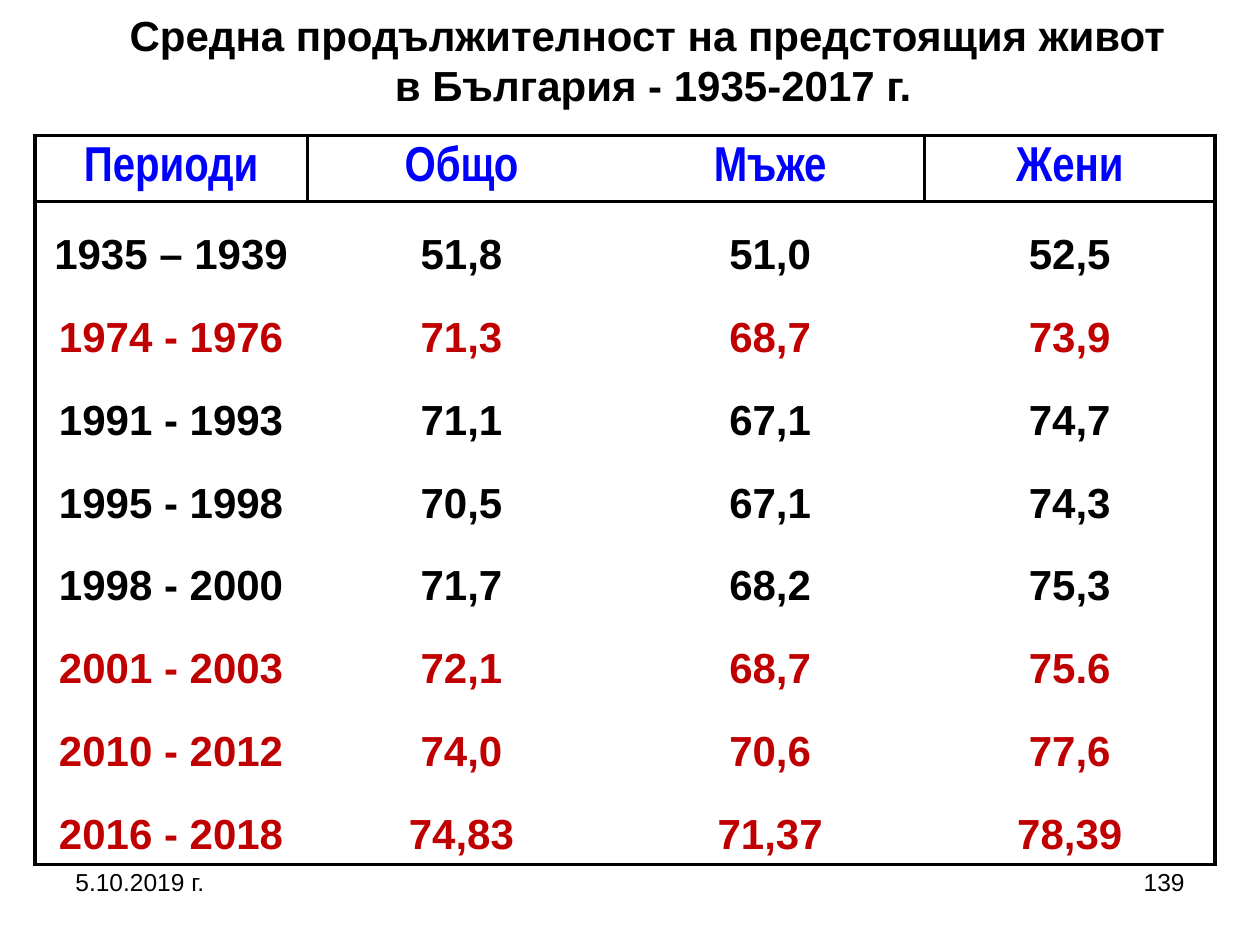
from lxml.etree import SubElement
from pptx import Presentation
from pptx.dml.color import RGBColor
from pptx.enum.text import MSO_ANCHOR as Anchor, MSO_AUTO_SIZE as Fit, PP_ALIGN as Align
from pptx.oxml.ns import qn
from pptx.util import Pt

BLACK, RED, BLUE, WHITE = "000000", "C00000", "0000FF", "FFFFFF"
HEADS = ["Периоди", "Общо", "Мъже", "Жени"]
ROWS = [
    (BLACK, "1935 – 1939", "51,8", "51,0", "52,5"),
    (RED, "1974 - 1976", "71,3", "68,7", "73,9"),
    (BLACK, "1991 - 1993", "71,1", "67,1", "74,7"),
    (BLACK, "1995 - 1998", "70,5", "67,1", "74,3"),
    (BLACK, "1998 - 2000", "71,7", "68,2", "75,3"),
    (RED, "2001 - 2003", "72,1", "68,7", "75.6"),
    (RED, "2010 - 2012", "74,0", "70,6", "77,6"),
    (RED, "2016 - 2018", "74,83", "71,37", "78,39"),
]
WIDTHS = [155.5, 176.4, 176.4, 166]


def tint(code):
    """Turn a hex string into a colour."""
    return RGBColor.from_string(code)


def add_run(para, text, size, color=BLACK, bold=False, face="Arial"):
    """Add one formatted run to a paragraph."""
    run = para.add_run()
    run.text = text
    font = run.font
    font.name, font.size, font.bold = face, Pt(size), bold
    font.color.rgb = tint(color)


def add_title(slide, lines):
    """Place the title and write its lines."""
    title = slide.shapes.title
    title.left, title.top, title.width, title.height = Pt(64), Pt(1.5), Pt(618.5), Pt(65.5)
    frame = title.text_frame
    frame.word_wrap, frame.auto_size = False, Fit.NONE
    frame.vertical_anchor = Anchor.MIDDLE
    for i, line in enumerate(lines):
        para = frame.add_paragraph() if i else frame.paragraphs[0]
        para.alignment = Align.CENTER
        add_run(para, line, 24, bold=True)


def add_note(slide, left, text, align):
    """Add a footer text box."""
    box = slide.shapes.add_textbox(Pt(left), Pt(492), Pt(168), Pt(37.5))
    box.text_frame.word_wrap = True
    para = box.text_frame.paragraphs[0]
    para.alignment = align
    add_run(para, text, 14)


def set_edges(cell, edges):
    """Draw the named cell edges and hide the rest."""
    props = cell._tc.get_or_add_tcPr()
    for side in "LRTB":
        line = SubElement(props, qn(f"a:ln{side}"), w=str(Pt(2)))
        if side in edges:
            fill = SubElement(line, qn("a:solidFill"))
            SubElement(fill, qn("a:srgbClr"), val=BLACK)
        else:
            SubElement(line, qn("a:noFill"))


def find_edges(row, col):
    """Name the edges drawn around one cell."""
    last = len(HEADS) - 1
    edges = "L" if col == 0 or row == 0 and col in (1, last) else ""
    edges += "R" if col == last or row == 0 and col in (0, last - 1) else ""
    edges += "T" if row < 2 else ""
    return edges + ("B" if row in (0, len(ROWS)) else "")


def fill_cell(cell, text, edges, head, color):
    """Write and format one table cell."""
    set_edges(cell, edges)
    cell.fill.solid()
    cell.fill.fore_color.rgb = tint(WHITE)
    cell.vertical_anchor = Anchor.MIDDLE
    cell.margin_top = cell.margin_bottom = Pt(2)
    para = cell.text_frame.paragraphs[0]
    para.alignment = Align.CENTER
    if head:
        add_run(para, text, 28, color, True, "Arial Narrow")
    else:
        para.line_spacing = 1.5
        add_run(para, text, 24, color, True)


def add_grid(slide):
    """Add the table of life expectancy."""
    count = len(ROWS) + 1
    frame = slide.shapes.add_table(count, len(HEADS), Pt(20), Pt(77.2), Pt(674.3), Pt(417))
    table = frame.table
    for col, width in zip(table.columns, WIDTHS):
        col.width = Pt(width)
    for r, (color, *texts) in enumerate([(BLUE, *HEADS), *ROWS]):
        table.rows[r].height = Pt(47.35 if r else 38.2)
        for c, text in enumerate(texts):
            fill_cell(table.cell(r, c), text, find_edges(r, c), r == 0, color)


def main():
    """Build and save the slide."""
    deck = Presentation()
    deck.slide_width, deck.slide_height = Pt(720), Pt(540)
    slide = deck.slides.add_slide(deck.slide_layouts[5])
    add_grid(slide)
    add_note(slide, 516, "139", Align.RIGHT)
    add_note(slide, 36, "5.10.2019 г.", Align.LEFT)
    add_title(slide, ["Средна продължителност на предстоящия живот ",
                      "в България - 1935-2017 г."])
    deck.save("out.pptx")


if __name__ == "__main__":
    main()
